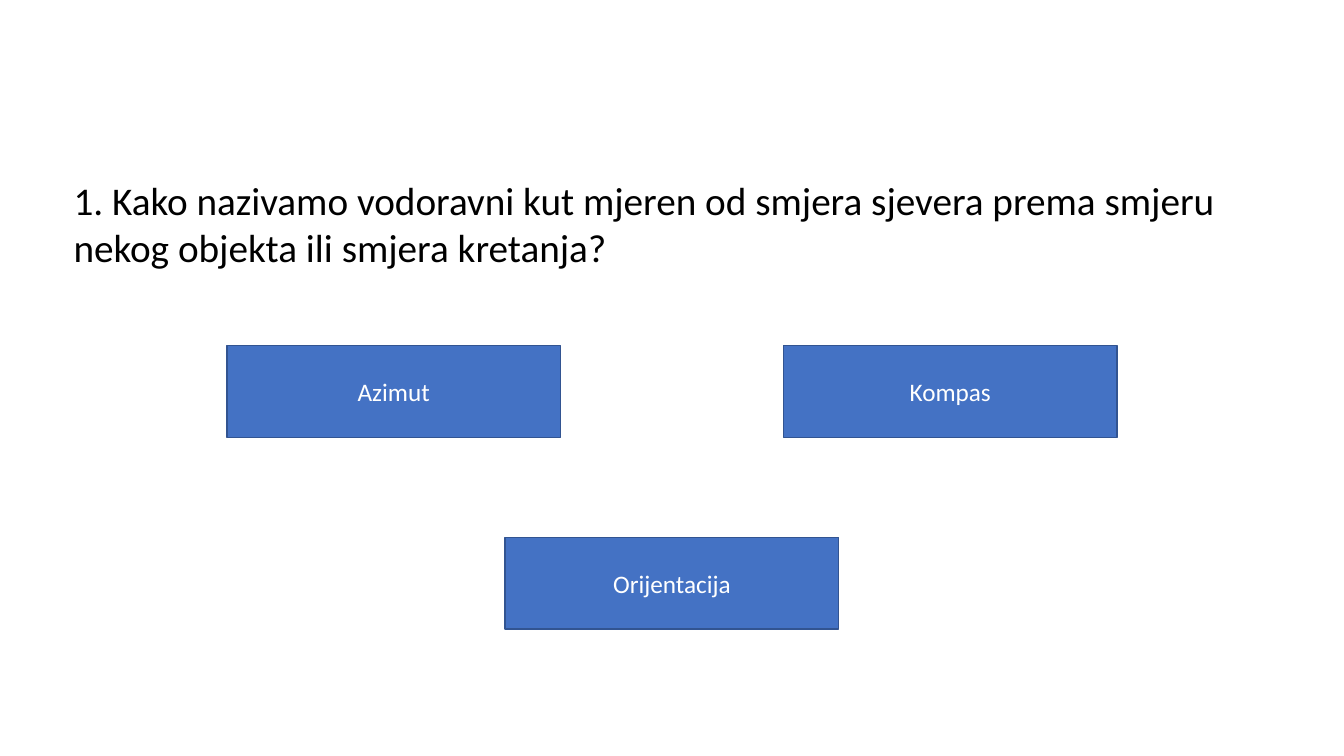
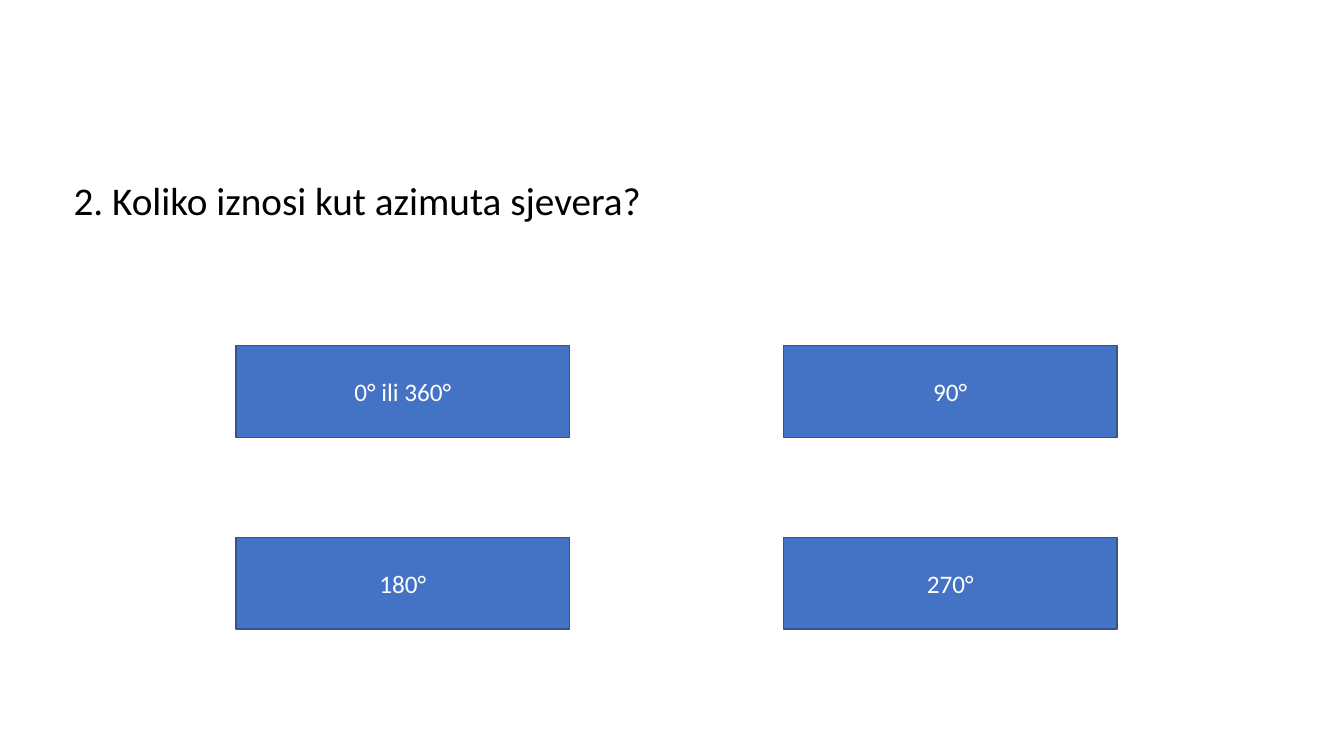
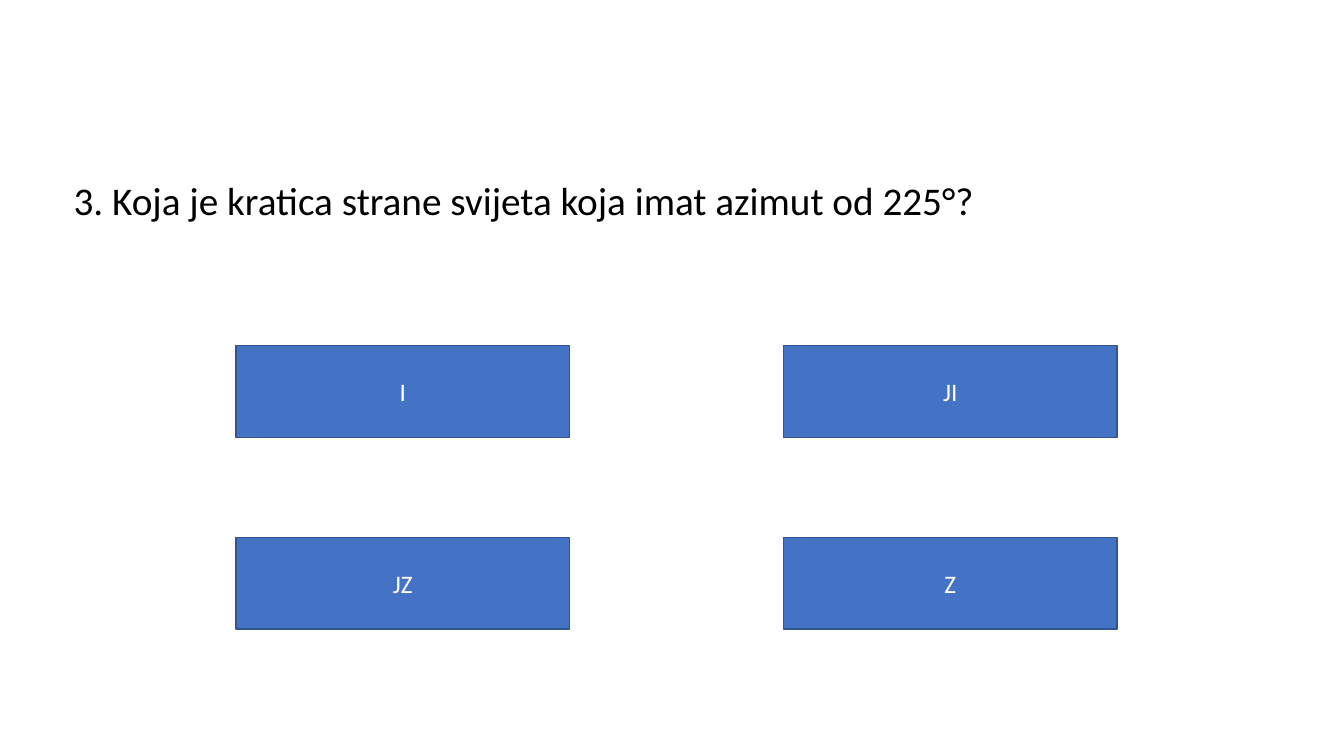
import pptx
import pptx.util
import pptx.dml.color
import pptx.enum.shapes
import pptx.enum.text

Inches, Pt = pptx.util.Inches, pptx.util.Pt
MSO_ANCHOR = pptx.enum.text.MSO_ANCHOR
PP_ALIGN = pptx.enum.text.PP_ALIGN

# Shared style
COLOURS = {"question": "000000", "answer": "FFFFFF", "button": "4472C4", "border": "325491"}
FONTS = {
    "question": {"name": "Calibri", "size": Pt(28), "bold": False},
    "answer": {"name": "Calibri", "size": Pt(18), "bold": False},
}
FRAMES = {
    "question": {"word_wrap": True, "vertical_anchor": MSO_ANCHOR.TOP,
                 "auto_size": pptx.enum.text.MSO_AUTO_SIZE.SHAPE_TO_FIT_TEXT},
    "answer": {"word_wrap": True, "vertical_anchor": MSO_ANCHOR.MIDDLE},
}
ALIGNMENTS = {"question": PP_ALIGN.LEFT, "answer": PP_ALIGN.CENTER}

# Answer grid, in inches
SLIDE_W, SLIDE_H = 13.33, 7.5
BUTTON_W, BUTTON_H = 3.31, 0.91
MIDDLE = (SLIDE_W - BUTTON_W) / 2
RIGHT = MIDDLE + 2.76
ROWS = [3.43, 5.33]
TRIO = [(MIDDLE - 2.76, ROWS[0]), (RIGHT, ROWS[0]), (MIDDLE, ROWS[1])]
QUARTET = [(column, row) for row in ROWS for column in (2.34, RIGHT)]

# Question, height of its box, answer places, answers
QUIZ = [
    ("1. Kako nazivamo vodoravni kut mjeren od smjera sjevera prema smjeru "
     "nekog objekta ili smjera kretanja?", 1.04, TRIO,
     ["Azimut", "Kompas", "Orijentacija"]),
    ("2. Koliko iznosi kut azimuta sjevera?", 0.57, QUARTET,
     ["0° ili 360°", "90°", "180°", "270°"]),
    ("3. Koja je kratica strane svijeta koja imat azimut od 225°?", 0.57, QUARTET,
     ["I", "JI", "JZ", "Z"]),
]


def colour(role):
    return pptx.dml.color.RGBColor.from_string(COLOURS[role])


def write(shape, text, role):
    frame = shape.text_frame
    frame.text = text
    for attribute, value in FRAMES[role].items():
        setattr(frame, attribute, value)
    paragraph = frame.paragraphs[0]
    paragraph.alignment = ALIGNMENTS[role]
    font = paragraph.runs[0].font
    for attribute, value in FONTS[role].items():
        setattr(font, attribute, value)
    font.color.rgb = colour(role)


deck = pptx.Presentation()
deck.slide_width, deck.slide_height = Inches(SLIDE_W), Inches(SLIDE_H)
title_only = deck.slide_layouts.get_by_name("Title Only")

for question, question_h, places, answers in QUIZ:
    slide = deck.slides.add_slide(title_only)

    # Question
    title = slide.shapes.title
    title.left, title.top = Inches(0.63), Inches(1.7)
    title.width, title.height = Inches(11.81), Inches(question_h)
    write(title, question, "question")

    # Answers
    for (left, top), answer in zip(places, answers):
        button = slide.shapes.add_shape(
            pptx.enum.shapes.MSO_SHAPE.RECTANGLE,
            Inches(left), Inches(top), Inches(BUTTON_W), Inches(BUTTON_H))
        button.shadow.inherit = False
        button.fill.solid()
        button.fill.fore_color.rgb = colour("button")
        button.line.color.rgb = colour("border")
        button.line.width = Pt(1)
        write(button, answer, "answer")

deck.save("out.pptx")
